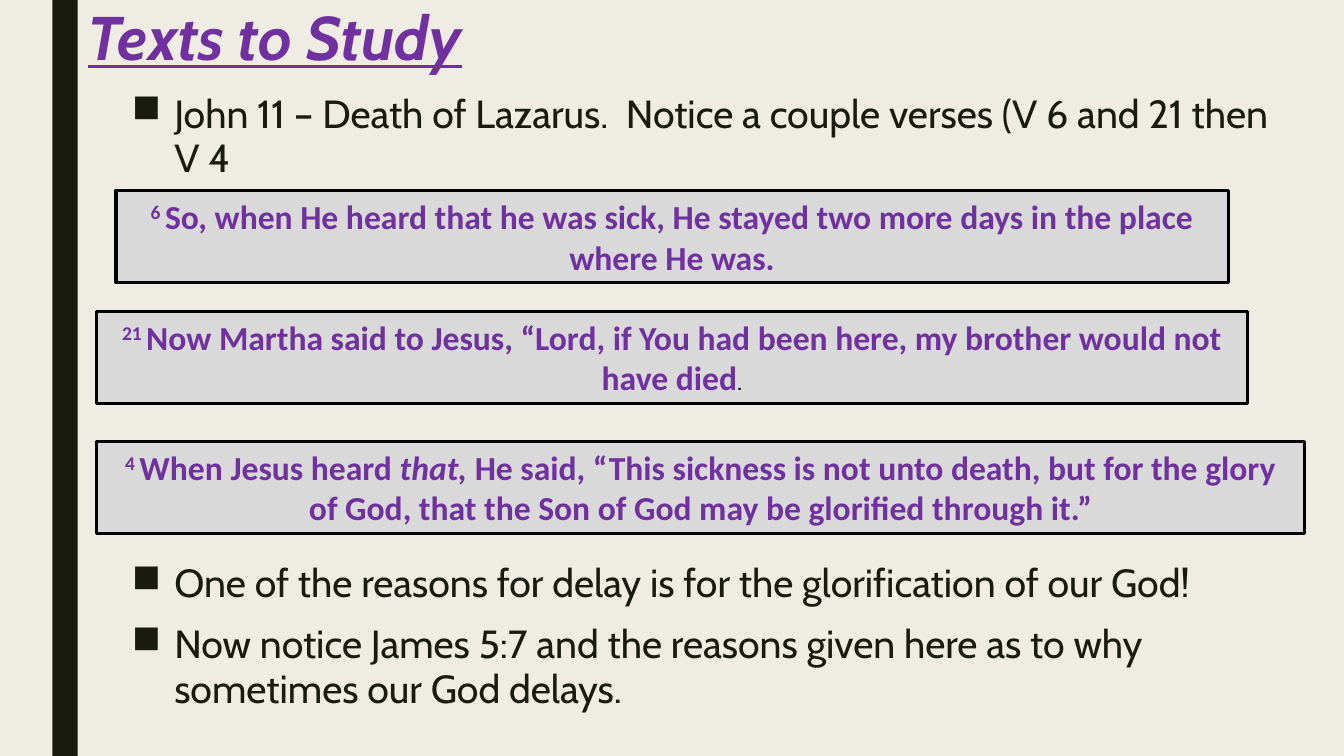
from lxml.etree import SubElement
from pptx import Presentation
from pptx.dml.color import RGBColor
from pptx.enum.shapes import MSO_SHAPE as Preset
from pptx.enum.text import MSO_ANCHOR as Anchor, PP_ALIGN as Align
from pptx.oxml.ns import qn
from pptx.util import Inches, Pt

THEME = {
    "paper": RGBColor.from_string("EFEDE3"),
    "ink": RGBColor.from_string("191B0E"),
    "purple": RGBColor.from_string("7030A0"),
    "panel": RGBColor.from_string("D9D9D9"),
    "black": RGBColor.from_string("000000"),
    "title": Pt(44), "body": Pt(28), "verse": Pt(24), "small": Pt(18),
    "heading_font": "Cabin", "verse_font": "Calibri",
}

presentation = Presentation()
presentation.slide_width = Inches(13.33)
presentation.slide_height = Inches(7.5)
COLUMN = presentation.slide_width / 100
ROW = presentation.slide_height / 100


def area(left, top, width, height):
    """Turn percentages of the slide into a left, top, width, height tuple."""
    return tuple(round(length) for length in
                 (left * COLUMN, top * ROW, width * COLUMN, height * ROW))


def format_font(font, color, **values):
    font.color.rgb = color
    for name, value in values.items():
        setattr(font, name, value)


slide = presentation.slides.add_slide(presentation.slide_layouts[5])
slide.background.fill.solid()
slide.background.fill.fore_color.rgb = THEME["paper"]

# Side band
band = slide.shapes.add_shape(Preset.RECTANGLE, *area(3.9, 0, 1.88, 100))
band.shadow.inherit = False
band.fill.solid()
band.fill.fore_color.rgb = THEME["ink"]
band.line.fill.background()

# Title
title = slide.shapes.title
title.left, title.top, title.width, title.height = area(5.78, 0, 30, 10.67)
title.text_frame.text = "Texts to Study"
title.text_frame.vertical_anchor = Anchor.MIDDLE
heading = title.text_frame.paragraphs[0]
heading.alignment = Align.LEFT
heading.line_spacing = 0.89
format_font(heading.runs[0].font, THEME["purple"], name=THEME["heading_font"],
            size=THEME["title"], bold=True, italic=True, underline=True)

# Bullets above and below the verses: top, height, points
BULLETS = [
    (11.6, 13.33, ["John 11 – Death of Lazarus.  Notice a couple verses (V 6 and 21 then V 4"]),
    (73.73, 24.13, ["One of the reasons for delay is for the glorification of our God!",
                    "Now notice James 5:7 and the reasons given here as to why "
                    "sometimes our God delays."]),
]
for top, height, points in BULLETS:
    frame = slide.shapes.add_textbox(*area(9.08, top, 86.87, height)).text_frame
    frame.word_wrap = True
    for index, point in enumerate(points):
        paragraph = frame.add_paragraph() if index else frame.paragraphs[0]
        paragraph.text = point
        paragraph.line_spacing = 0.94
        paragraph.space_before = Pt(10 if index else 0)
        paragraph.space_after = Pt(2)
        properties = paragraph._p.get_or_add_pPr()
        properties.set("marL", str(Inches(0.42)))
        properties.set("indent", str(-Inches(0.42)))
        SubElement(properties, qn("a:buChar"), char="■")
        format_font(paragraph.runs[0].font, THEME["ink"],
                    name=THEME["heading_font"], size=THEME["body"])

# Verse panels: left, top, width, then lines of (text, style) runs
VERSES = [
    (8.63, 25.2, 82.75, [
        [("6 ", "number"),
         ("So, when He heard that he was sick, He stayed two more days in the place", "plain")],
        [("where He was.", "plain")]]),
    (7.2, 41.2, 85.6, [
        [("21 ", "number"),
         ("Now Martha said to Jesus, “Lord, if You had been here, my brother would not", "plain")],
        [("have died", "plain"), (".", "stop")]]),
    (7.2, 58.4, 89.87, [
        [("4 ", "number"), ("When Jesus heard ", "plain"), ("that,", "italic"),
         (" He said, “This sickness is not unto death, but for the glory", "plain")],
        [("of God, that the Son of God may be glorified through it.”", "plain")]]),
]
VERSE_STYLE = {"color": THEME["purple"], "name": THEME["verse_font"],
               "size": THEME["verse"], "bold": True}
STYLES = {
    "plain": VERSE_STYLE,
    "number": VERSE_STYLE,
    "italic": {**VERSE_STYLE, "italic": True},
    "stop": {"color": THEME["black"], "name": THEME["heading_font"],
             "size": THEME["small"], "bold": False},
}
for left, top, width, lines in VERSES:
    panel = slide.shapes.add_shape(Preset.RECTANGLE, *area(left, top, width, 12.13))
    panel.shadow.inherit = False
    panel.fill.solid()
    panel.fill.fore_color.rgb = THEME["panel"]
    panel.line.color.rgb = THEME["black"]
    panel.line.width = Pt(2.25)
    frame = panel.text_frame
    frame.word_wrap = False
    frame.vertical_anchor = Anchor.MIDDLE
    for index, line in enumerate(lines):
        paragraph = frame.add_paragraph() if index else frame.paragraphs[0]
        paragraph.alignment = Align.CENTER
        for text, style in line:
            run = paragraph.add_run()
            run.text = text
            format_font(run.font, **STYLES[style])
            if style == "number":
                run._r.get_or_add_rPr().set("baseline", "30000")

presentation.save("out.pptx")
